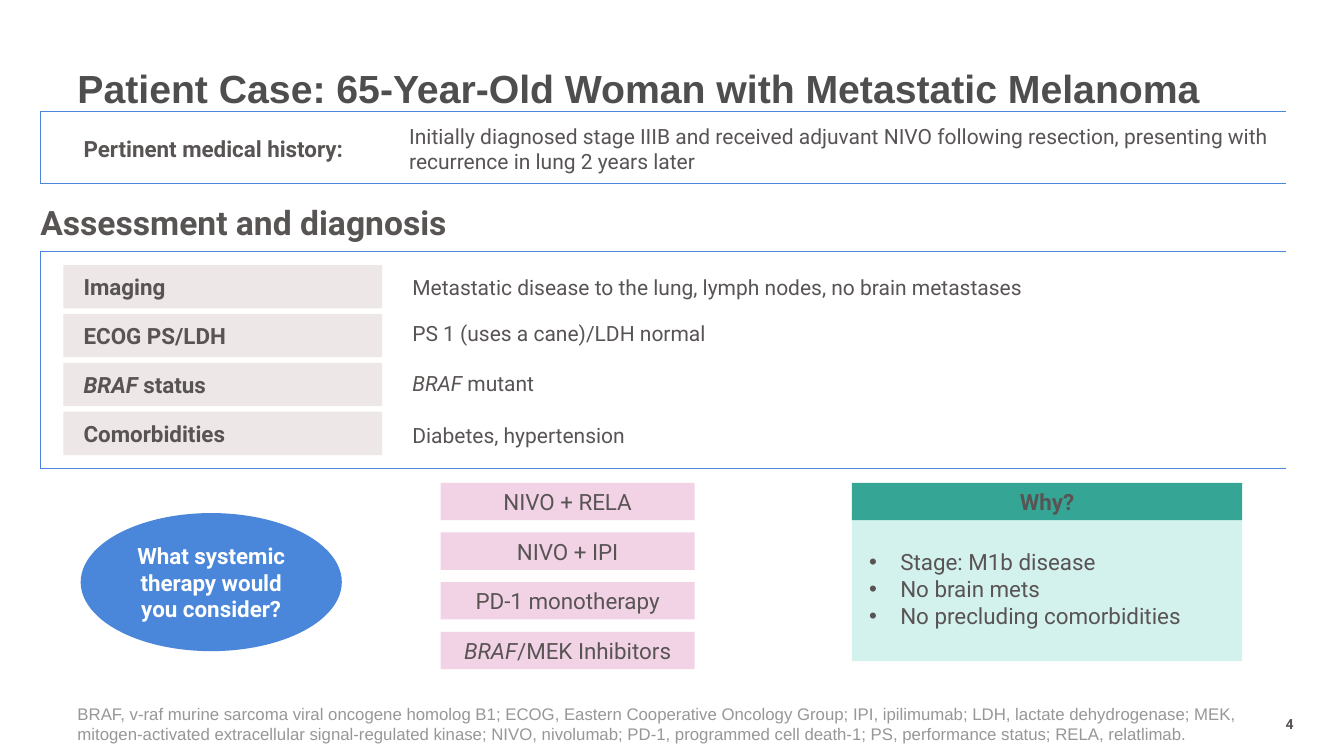
"""Build the patient case slide on metastatic melanoma."""
from lxml import etree
from pptx import Presentation
from pptx.dml.color import RGBColor
from pptx.enum.shapes import MSO_CONNECTOR, MSO_SHAPE
from pptx.enum.text import MSO_ANCHOR, PP_ALIGN
from pptx.oxml.ns import qn
from pptx.util import Inches, Pt

GREY, BLUE, WHITE = "595454", "4A86D9", "FFFFFF"


def color(hex_value):
    return RGBColor.from_string(hex_value)


def add_block(place, lines, size=16, fill=None, ink=GREY, bold=False, font="Roboto",
              align=PP_ALIGN.LEFT, anchor=MSO_ANCHOR.MIDDLE, insets=(0.1, 0.05, 0.1, 0.05),
              outline=MSO_SHAPE.RECTANGLE, bulleted=False, spacing=None):
    box = [Inches(length) for length in place]
    if fill:
        block = slide.shapes.add_shape(outline, *box)
        block.shadow.inherit = False
        block.fill.solid()
        block.fill.fore_color.rgb = color(fill)
        block.line.fill.background()
    else:
        block = slide.shapes.add_textbox(*box)
    frame = block.text_frame
    frame.word_wrap = True
    frame.vertical_anchor = anchor
    (frame.margin_left, frame.margin_top,
     frame.margin_right, frame.margin_bottom) = [Inches(inset) for inset in insets]
    for index, line in enumerate(lines):
        paragraph = frame.add_paragraph() if index else frame.paragraphs[0]
        paragraph.alignment = align
        if spacing:
            paragraph.line_spacing = Pt(spacing)
        if bulleted:
            properties = paragraph._p.get_or_add_pPr()
            properties.set("marL", str(Inches(0.31)))
            properties.set("indent", str(-Inches(0.31)))
            etree.SubElement(properties, qn("a:buFont")).set("typeface", "Arial")
            etree.SubElement(properties, qn("a:buChar")).set("char", "•")
        paragraph.font.name = font
        paragraph.font.size = Pt(size)
        paragraph.font.bold = bold
        paragraph.font.color.rgb = color(ink)
        for position, part in enumerate(line.split("*")):
            if part:
                run = paragraph.add_run()
                run.text = part
                if position % 2:
                    run.font.italic = True


presentation = Presentation()
presentation.slide_width = Inches(13.33)
presentation.slide_height = Inches(7.5)
slide = presentation.slides.add_slide(presentation.slide_layouts[6])

add_block((0.67, 0.22, 11.75, 1.3),
          ["Patient Case: 65-Year-Old Woman with Metastatic Melanoma"],
          size=28, ink="4D4E4D", bold=True, font="Arial")

side_insets = (0.2, 0, 0.2, 0)
add_block((3.96, 1.24, 8.97, 0.47),
          ["Initially diagnosed stage IIIB and received adjuvant NIVO following resection, "
           "presenting with recurrence in lung 2 years later"], size=15, fill=WHITE)
add_block((0.63, 1.22, 3.16, 0.51), ["Pertinent medical history:"],
          fill=WHITE, bold=True, insets=side_insets)

add_block((0.4, 2, 7.33, 0.46), ["Assessment and diagnosis"], size=24, bold=True,
          anchor=MSO_ANCHOR.TOP, insets=(0, 0, 0, 0))

assessments = [
    ("Imaging", "Metastatic disease to the lung, lymph nodes, no brain metastases", 2.69, 14),
    ("ECOG PS/LDH", "PS 1 (uses a cane)/LDH normal", 3.14, 15),
    ("*BRAF* status", "*BRAF* mutant", 3.62, None),
    ("Comorbidities", "Diabetes, hypertension", 4.15, 15),
]
for row, (topic, finding, finding_top, spacing) in enumerate(assessments):
    add_block((0.63, 2.63 + row * 0.485, 3.16, 0.43), [topic],
              fill="EEE7E7", bold=True, insets=side_insets)
    add_block((3.89, finding_top, 7.13, 0.37), [finding], size=15,
              insets=side_insets, spacing=spacing)

left, right = 0.4, 12.75
for top, bottom in [(1.1, 1.82), (2.49, 4.65)]:
    for ends in [(left, top, left, bottom), (left, top, right, top),
                 (left, bottom, right, bottom)]:
        rule = slide.shapes.add_connector(MSO_CONNECTOR.STRAIGHT,
                                          *[Inches(length) for length in ends])
        rule.line.color.rgb = color(BLUE)
        rule.line.width = Pt(0.5)
        etree.SubElement(rule._element.spPr, qn("a:effectLst"))

add_block((0.8, 5.09, 2.59, 1.37), ["What systemic therapy would you consider?"],
          fill=BLUE, ink=WHITE, bold=True, align=PP_ALIGN.CENTER, outline=MSO_SHAPE.OVAL)

therapies = ["NIVO + RELA", "NIVO + IPI", "PD-1 monotherapy", "*BRAF*/MEK Inhibitors"]
for row, therapy in enumerate(therapies):
    add_block((4.37, 4.79 + row * 0.493, 2.52, 0.37), [therapy],
              fill="F2D3E6", align=PP_ALIGN.CENTER)

add_block((8.45, 5.12, 3.87, 1.44),
          ["Stage: M1b disease", "No brain mets", "No precluding comorbidities"],
          fill="D3F1ED", insets=(0.17, 0.05, 0.1, 0.05), bulleted=True)
add_block((8.45, 4.79, 3.87, 0.37), ["Why?"], fill="35A696", bold=True,
          align=PP_ALIGN.CENTER)

add_block((12.58, 7.03, 0.36, 0.25), ["4"], size=10, bold=True, align=PP_ALIGN.RIGHT,
          anchor=MSO_ANCHOR.TOP, insets=(0.08, 0.07, 0.11, 0))
add_block((0.67, 6.95, 11.75, 0.48),
          ["BRAF, v-raf murine sarcoma viral oncogene homolog B1; ECOG, Eastern Cooperative "
           "Oncology Group; IPI, ipilimumab; LDH, lactate dehydrogenase; MEK, "
           "mitogen-activated extracellular signal-regulated kinase; NIVO, nivolumab; "
           "PD-1, programmed cell death-1; PS, performance status; RELA, relatlimab."],
          size=12, ink="979797", font="Arial", anchor=MSO_ANCHOR.BOTTOM)

presentation.save("out.pptx")
